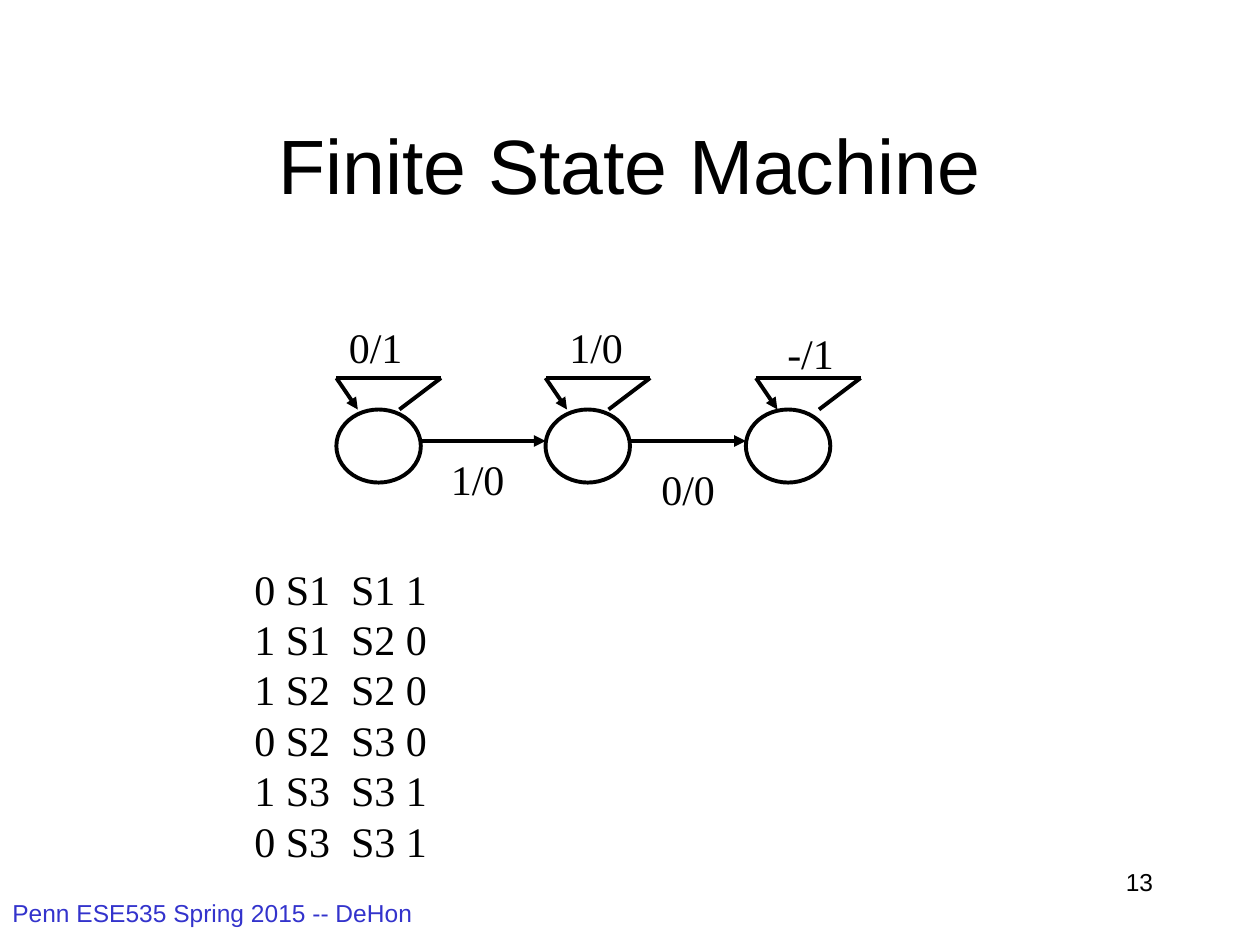
from pptx import Presentation
from pptx.dml.color import RGBColor
from pptx.enum.shapes import MSO_CONNECTOR, MSO_SHAPE
from pptx.enum.text import MSO_ANCHOR, MSO_AUTO_SIZE, PP_ALIGN
from pptx.oxml.ns import qn
from pptx.util import Inches, Pt
from lxml.etree import SubElement

COLORS = {name: RGBColor.from_string(value) for name, value in {
    "black": "000000", "white": "FFFFFF", "footer": "3333CC"}.items()}
LINE_WIDTH = Pt(2.25)

presentation = Presentation()
presentation.slide_width = Inches(10)
presentation.slide_height = Inches(7.5)
slide = presentation.slides.add_slide(presentation.slide_layouts[6])


def add_text(lines, left, top, width, height, size=24, font="Times New Roman",
             color="black", align=PP_ALIGN.LEFT, wrap=False):
    frame = slide.shapes.add_textbox(
        Inches(left), Inches(top), Inches(width), Inches(height)).text_frame
    frame.word_wrap = wrap
    frame.auto_size = MSO_AUTO_SIZE.NONE if wrap else MSO_AUTO_SIZE.SHAPE_TO_FIT_TEXT
    frame.text = "\n".join(lines)
    for paragraph in frame.paragraphs:
        paragraph.alignment = align
        paragraph.font.size = Pt(size)
        paragraph.font.name = font
        paragraph.font.color.rgb = COLORS[color]
    return frame


def add_line(start, end, arrow=False):
    connector = slide.shapes.add_connector(
        MSO_CONNECTOR.STRAIGHT, *[Inches(value) for value in (*start, *end)])
    connector.line.color.rgb = COLORS["black"]
    connector.line.width = LINE_WIDTH
    if arrow:
        SubElement(connector.line._get_or_add_ln(), qn("a:tailEnd"), type="triangle")
    SubElement(connector._element.spPr, qn("a:effectLst"))


add_text(["Penn ESE535 Spring 2015 -- DeHon"], 0, 7.08, 3.83, 0.42,
         size=14, font="Arial", color="footer", wrap=True)
add_text(["13"], 7.17, 6.83, 2.08, 0.5,
         size=14, font="Arial", align=PP_ALIGN.RIGHT, wrap=True)
title = add_text(["Finite State Machine"], 0.75, 0.67, 8.5, 1.25,
                 size=44, font="Arial", align=PP_ALIGN.CENTER, wrap=True)
title.vertical_anchor = MSO_ANCHOR.MIDDLE

state_width, state_top = 0.67, 3.25
state_lefts = [2.67, 4.33, 5.92]
for left in state_lefts:
    state = slide.shapes.add_shape(
        MSO_SHAPE.OVAL, Inches(left), Inches(state_top), Inches(state_width), Inches(0.58))
    state.shadow.inherit = False
    state.fill.solid()
    state.fill.fore_color.rgb = COLORS["white"]
    state.line.color.rgb = COLORS["black"]
    state.line.width = LINE_WIDTH

for left, next_left in zip(state_lefts, state_lefts[1:]):
    add_line((left + state_width, 3.5), (next_left, 3.5), arrow=True)

loop_top = 3
for left in (2.67, 4.33, 6):
    right = left + 0.83
    add_line((left + 0.5, state_top), (right, loop_top))
    add_line((right, loop_top), (left, loop_top))
    add_line((left, loop_top), (left + 0.17, state_top), arrow=True)

for label, left, top, width in [
    ("1/0", 3.48, 3.55, 0.63),
    ("0/0", 5.15, 3.63, 0.63),
    ("-/1", 6.15, 2.55, 0.57),
    ("0/1", 2.67, 2.5, 0.63),
    ("1/0", 4.42, 2.5, 0.63),
]:
    add_text([label], left, top, width, 0.5)

transitions = add_text(
    ["0 S1  S1 1", "1 S1  S2 0", "1 S2  S2 0", "0 S2  S3 0", "1 S3  S3 1", "0 S3  S3 1"],
    1.92, 4.42, 1.57, 2.5)
for paragraph in transitions.paragraphs:
    paragraph.line_spacing = Pt(28.8)

presentation.save("out.pptx")
